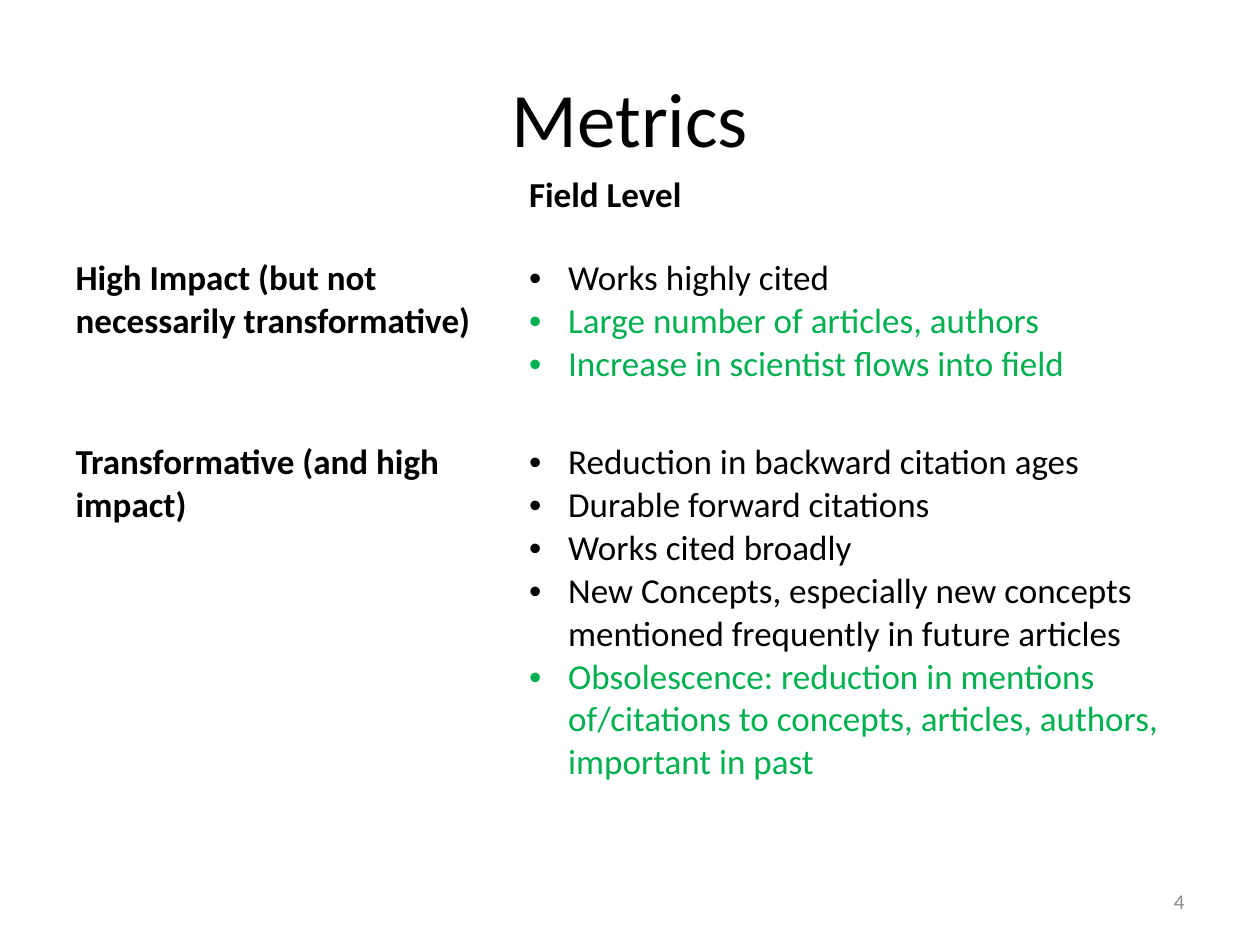
from lxml.etree import SubElement
from pptx import Presentation
from pptx.dml.color import RGBColor
from pptx.enum.text import MSO_ANCHOR as Anchor, PP_ALIGN as Align
from pptx.oxml.ns import qn
from pptx.util import Cm, Pt

BLACK, GREEN, GRAY, WHITE = "000000", "00B050", "8C8C8C", "FFFFFF"
TITLE = "Metrics"
PAGE_NUMBER = "4"
COLUMN_HEADING = "Field Level"
METRICS = [
    ("High Impact (but not necessarily transformative)", [
        ("Works highly cited", BLACK),
        ("Large number of articles, authors", GREEN),
        ("Increase in scientist flows into field", GREEN),
    ]),
    ("Transformative (and high impact)", [
        ("Reduction in backward citation ages", BLACK),
        ("Durable forward citations", BLACK),
        ("Works cited broadly", BLACK),
        ("New Concepts, especially new concepts mentioned frequently in future articles", BLACK),
        ("Obsolescence: reduction in mentions of/citations to concepts, "
         "articles, authors, important in past", GREEN),
    ]),
]
COLUMN_WIDTHS = [9.14, 13.72]
ROW_HEIGHTS = [1.68, 3.71, 9.86]
MARGIN = 1.27
BULLET_INDENT = Cm(0.79)


def color(value):
    return RGBColor.from_string(value)


def write(para, text, size=20, shade=BLACK, bold=False, align=Align.LEFT, bullet=False):
    para.alignment = align
    span = para.add_run()
    span.text = text
    span.font.name = "Calibri"
    span.font.size = Pt(size)
    span.font.bold = bold
    span.font.color.rgb = color(shade)
    if bullet:
        props = para._p.get_or_add_pPr()
        props.set("marL", str(BULLET_INDENT))
        props.set("indent", str(-BULLET_INDENT))
        SubElement(props, qn("a:buFont"), typeface="Arial")
        SubElement(props, qn("a:buChar"), char="•")


def write_bullets(frame, items):
    for index, (text, shade) in enumerate(items):
        para = frame.add_paragraph() if index else frame.paragraphs[0]
        write(para, text, shade=shade, bullet=True)


def place(shape, left, top, width, height):
    shape.left, shape.top = Cm(left), Cm(top)
    shape.width, shape.height = Cm(width), Cm(height)


def add_metrics_table(page):
    frame = page.shapes.add_table(
        len(ROW_HEIGHTS), len(COLUMN_WIDTHS), Cm(MARGIN), Cm(3.38),
        Cm(sum(COLUMN_WIDTHS)), Cm(sum(ROW_HEIGHTS)))
    table = frame.table
    table.first_row = table.horz_banding = False
    for column, width in zip(table.columns, COLUMN_WIDTHS):
        column.width = Cm(width)
    for row, height in zip(table.rows, ROW_HEIGHTS):
        row.height = Cm(height)
    for cell in table.iter_cells():
        cell.fill.solid()
        cell.fill.fore_color.rgb = color(WHITE)
    write(table.cell(0, 1).text_frame.paragraphs[0], COLUMN_HEADING, bold=True)
    for row, (heading, items) in enumerate(METRICS, 1):
        write(table.cell(row, 0).text_frame.paragraphs[0], heading, bold=True)
        write_bullets(table.cell(row, 1).text_frame, items)


def main():
    deck = Presentation()
    deck.slide_width, deck.slide_height = Cm(25.4), Cm(19.05)
    page = deck.slides.add_slide(deck.slide_layouts[5])

    title = page.shapes.title
    place(title, MARGIN, 0.76, 22.86, 3.18)
    title.text_frame.vertical_anchor = Anchor.MIDDLE
    write(title.text_frame.paragraphs[0], TITLE, size=44, align=Align.CENTER)

    add_metrics_table(page)

    box = page.shapes.add_textbox(Cm(18.2), Cm(17.65), Cm(5.93), Cm(1.02))
    box.text_frame.word_wrap = True
    box.text_frame.vertical_anchor = Anchor.MIDDLE
    write(box.text_frame.paragraphs[0], PAGE_NUMBER, size=12, shade=GRAY, align=Align.RIGHT)

    deck.save("out.pptx")


if __name__ == "__main__":
    main()
